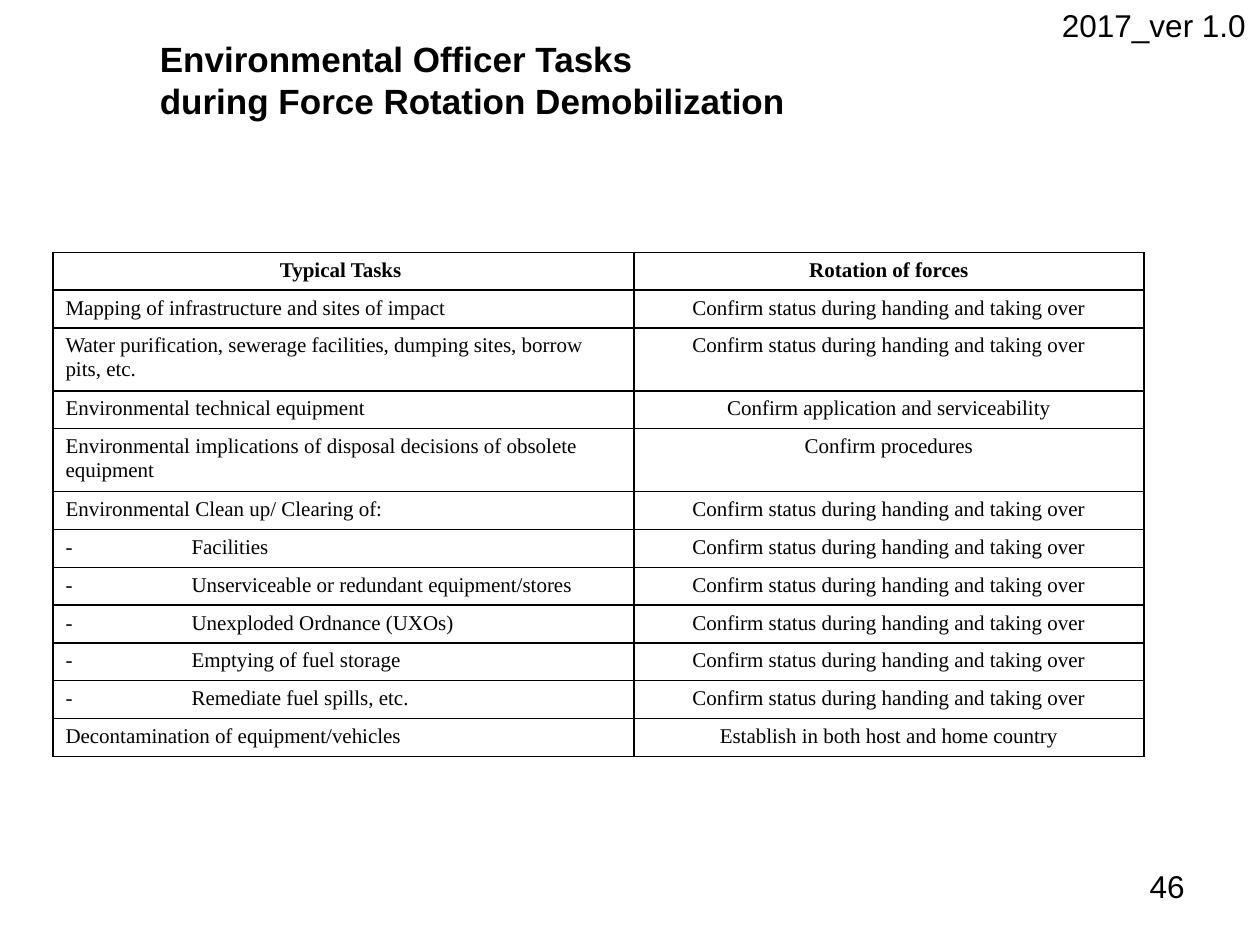
from dataclasses import dataclass

from lxml import etree
from pptx import Presentation
from pptx.dml.color import RGBColor
from pptx.enum.text import MSO_AUTO_SIZE, PP_ALIGN
from pptx.oxml.ns import qn
from pptx.util import Inches, Pt

LEFT, CENTER, RIGHT = PP_ALIGN.LEFT, PP_ALIGN.CENTER, PP_ALIGN.RIGHT
FIT_SHAPE, FIT_NONE = MSO_AUTO_SIZE.SHAPE_TO_FIT_TEXT, MSO_AUTO_SIZE.NONE


@dataclass(frozen=True)
class Theme:
    ink: str = "000000"
    heading_font: str = "Arial"
    table_font: str = "Times New Roman"
    title_size: int = 20
    label_size: int = 18
    table_size: int = 12
    border_width: int = 1


THEME = Theme()
WIDTH, HEIGHT = Inches(10), Inches(7.5)
COLUMN_WIDTHS = (4.61, 4.05)
LINE_ROW, WRAPPED_ROW = 0.3, 0.5
HANGING = Inches(0.38)
ITEM_TAB = Inches(1)

TITLE = ("Environmental Officer Tasks", "during Force Rotation Demobilization")
HEADER = ("Typical Tasks ", "Rotation of forces")
CONFIRM_STATUS = "Confirm status during handing and taking over"
CLEAN_UP_ITEMS = (
    "Facilities",
    "Unserviceable or redundant equipment/stores",
    "Unexploded Ordnance (UXOs)",
    "Emptying of fuel storage",
    "Remediate fuel spills, etc.",
)
TASKS = [
    ("Mapping of infrastructure and sites of impact", CONFIRM_STATUS),
    ("Water purification, sewerage facilities, dumping sites, borrow pits, etc.", CONFIRM_STATUS),
    ("Environmental technical equipment", "Confirm application and serviceability"),
    ("Environmental implications of disposal decisions of obsolete equipment", "Confirm procedures"),
    ("Environmental Clean up/ Clearing of:", CONFIRM_STATUS),
    *((f"-\t{item}", CONFIRM_STATUS) for item in CLEAN_UP_ITEMS),
    ("Decontamination of equipment/vehicles", "Establish in both host and home country"),
]
WRAPPED_TASKS = {2, 4}


def share(left, top, width, height):
    """Turn shares of the slide into a box of lengths."""
    return (int(left * WIDTH), int(top * HEIGHT), int(width * WIDTH), int(height * HEIGHT))


def style(paragraph, font_name, size, bold=False, align=LEFT):
    paragraph.alignment = align
    font = paragraph.font
    font.name, font.size, font.bold = font_name, Pt(size), bold
    font.color.rgb = RGBColor.from_string(THEME.ink)


def add_text(slide, box, lines, size, bold=False, align=LEFT, wrap=True, fit=FIT_NONE):
    frame = slide.shapes.add_textbox(*box).text_frame
    frame.word_wrap, frame.auto_size = wrap, fit
    frame.text = "\n".join(lines)
    for paragraph in frame.paragraphs:
        style(paragraph, THEME.heading_font, size, bold, align)


def add_borders(cell):
    properties = cell._tc.get_or_add_tcPr()
    for position, side in enumerate(("lnL", "lnR", "lnT", "lnB")):
        line = etree.Element(qn(f"a:{side}"), w=str(Pt(THEME.border_width)))
        fill = etree.SubElement(line, qn("a:solidFill"))
        etree.SubElement(fill, qn("a:srgbClr"), val=THEME.ink)
        properties.insert(position, line)


def set_indent(paragraph, centred):
    """Hang centred text; give dashed items a tab stop."""
    properties = paragraph._p.get_or_add_pPr()
    if centred:
        properties.set("marL", str(HANGING))
        properties.set("indent", str(-HANGING))
    elif "\t" in paragraph.text:
        tabs = etree.SubElement(properties, qn("a:tabLst"))
        etree.SubElement(tabs, qn("a:tab"), pos=str(ITEM_TAB), algn="l")


def fill_cell(cell, text, bold, centred):
    cell.text = text
    cell.fill.background()
    add_borders(cell)
    paragraph = cell.text_frame.paragraphs[0]
    set_indent(paragraph, centred)
    style(paragraph, THEME.table_font, THEME.table_size, bold, CENTER if centred else LEFT)


def add_task_table(slide, box):
    rows = [HEADER, *TASKS]
    table = slide.shapes.add_table(len(rows), len(HEADER), *box).table
    table.horz_banding = table.first_row = False
    for column, width in zip(table.columns, COLUMN_WIDTHS):
        column.width = Inches(width)
    for r, texts in enumerate(rows):
        table.rows[r].height = Inches(WRAPPED_ROW if r in WRAPPED_TASKS else LINE_ROW)
        for c, text in enumerate(texts):
            fill_cell(table.cell(r, c), text, bold=r == 0, centred=r == 0 or c == 1)


def main():
    deck = Presentation()
    deck.slide_width, deck.slide_height = WIDTH, HEIGHT
    slide = deck.slides.add_slide(deck.slide_layouts[6])
    add_task_table(slide, share(0.042, 0.267, 0.867, 0.535))
    add_text(slide, share(0.117, 0.033, 0.938, 0.103), TITLE, THEME.title_size, bold=True, fit=FIT_SHAPE)
    add_text(slide, share(0.717, 0.911, 0.233, 0.069), ["46"], THEME.label_size, align=RIGHT)
    add_text(slide, share(0.833, 0, 0.167, 0.053), ["2017_ver 1.0"], THEME.label_size, wrap=False, fit=FIT_SHAPE)
    deck.save("out.pptx")


if __name__ == "__main__":
    main()
